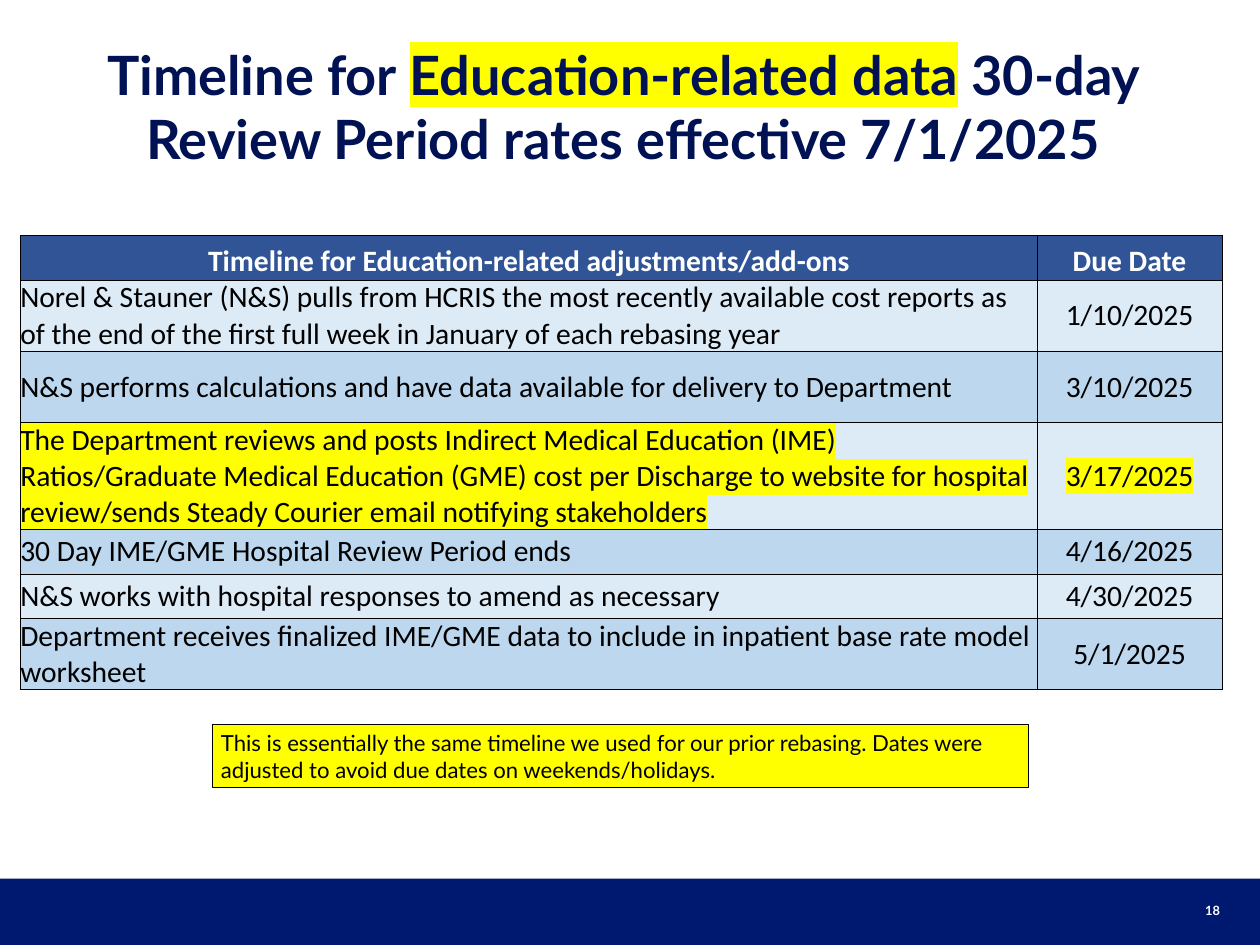
import pptx
import pptx.util
import pptx.dml.color
import pptx.enum.shapes
import pptx.enum.text
import pptx.oxml
import pptx.oxml.ns

Pt = pptx.util.Pt
RGBColor = pptx.dml.color.RGBColor
ALIGN = pptx.enum.text.PP_ALIGN
ANCHOR = pptx.enum.text.MSO_ANCHOR
RECTANGLE = pptx.enum.shapes.MSO_SHAPE.RECTANGLE

NAVY = RGBColor(0x00, 0x19, 0x70)
TITLE_NAVY = RGBColor(0x00, 0x12, 0x54)
HEADER_BLUE = RGBColor(0x30, 0x54, 0x96)
PALE_BLUE = RGBColor(0xDD, 0xEB, 0xF7)
LIGHT_BLUE = RGBColor(0xBD, 0xD7, 0xEE)
YELLOW = RGBColor(0xFF, 0xFF, 0x00)
WHITE = RGBColor(0xFF, 0xFF, 0xFF)
BLACK = RGBColor(0x00, 0x00, 0x00)
NAMESPACE = pptx.oxml.ns.nsdecls("a")


def write_text(paragraph, runs, font_name, size, color, bold, alignment):
    paragraph.alignment = alignment
    font = paragraph.font
    font.name, font.size, font.bold = font_name, Pt(size), bold
    font.color.rgb = color
    for text, highlighted in runs:
        run = paragraph.add_run()
        run.text = text
        if highlighted:
            run._r.get_or_add_rPr().append(pptx.oxml.parse_xml(
                f'<a:highlight {NAMESPACE}><a:srgbClr val="{YELLOW}"/></a:highlight>'))


def set_frame(frame, horizontal_inset, vertical_inset):
    frame.word_wrap = True
    frame.vertical_anchor = ANCHOR.MIDDLE
    frame.margin_left = frame.margin_right = Pt(horizontal_inset)
    frame.margin_top = frame.margin_bottom = Pt(vertical_inset)


presentation = pptx.Presentation()
presentation.slide_width, presentation.slide_height = Pt(1024), Pt(768)
slide = presentation.slides.add_slide(presentation.slide_layouts[6])

footer = slide.shapes.add_shape(RECTANGLE, Pt(0), Pt(714), Pt(1024), Pt(54))
footer.shadow.inherit = False
footer.fill.solid()
footer.fill.fore_color.rgb = NAVY
footer.line.fill.background()

page_number = slide.shapes.add_textbox(Pt(827), Pt(719), Pt(169.5), Pt(41))
set_frame(page_number.text_frame, 5, 3)
write_text(page_number.text_frame.paragraphs[0], [("18", False)],
           "Lato", 10.4, WHITE, True, ALIGN.RIGHT)

title = slide.shapes.add_textbox(Pt(19.5), Pt(31), Pt(974), Pt(110))
set_frame(title.text_frame, 0, 0)
title_runs = [("Timeline for ", False), ("Education-related data", True),
              (" 30-day Review Period rates effective 7/1/2025", False)]
write_text(title.text_frame.paragraphs[0], title_runs,
           "Lato", 44, TITLE_NAVY, True, ALIGN.CENTER)

timeline_rows = [
    (36, "Timeline for Education-related adjustments/add-ons", "Due Date"),
    (58, "Norel & Stauner (N&S) pulls from HCRIS the most recently available cost "
         "reports as of the end of the first full week in January of each rebasing year",
     "1/10/2025"),
    (58, "N&S performs calculations and have data available for delivery to Department",
     "3/10/2025"),
    (87, "The Department reviews and posts Indirect Medical Education (IME) "
         "Ratios/Graduate Medical Education (GME) cost per Discharge to website for "
         "hospital review/sends Steady Courier email notifying stakeholders",
     "3/17/2025"),
    (36, "30 Day IME/GME Hospital Review Period ends", "4/16/2025"),
    (36, "N&S works with hospital responses to amend as necessary", "4/30/2025"),
    (58, "Department receives finalized IME/GME data to include in inpatient base "
         "rate model worksheet", "5/1/2025"),
]
HIGHLIGHTED_ROW = 3
table_height = sum(height for height, step, due_date in timeline_rows)
table = slide.shapes.add_table(len(timeline_rows), 2, Pt(16.5), Pt(191.5),
                               Pt(976.5), Pt(table_height)).table
table.first_row = table.horz_banding = False
table.columns[0].width, table.columns[1].width = Pt(826.5), Pt(150)

for row_index, (height, *texts) in enumerate(timeline_rows):
    table.rows[row_index].height = Pt(height)
    is_header = row_index == 0
    for column_index, text in enumerate(texts):
        cell = table.cell(row_index, column_index)
        cell.margin_left = cell.margin_right = cell.margin_top = cell.margin_bottom = 0
        cell.vertical_anchor = ANCHOR.BOTTOM if is_header else ANCHOR.MIDDLE
        centered = is_header or column_index == 1
        write_text(cell.text_frame.paragraphs[0],
                   [(text, row_index == HIGHLIGHTED_ROW)], "Calibri", 24,
                   WHITE if is_header else BLACK, is_header,
                   ALIGN.CENTER if centered else ALIGN.LEFT)
        properties = cell._tc.get_or_add_tcPr()
        for side in ("lnL", "lnR", "lnT", "lnB"):
            properties.append(pptx.oxml.parse_xml(
                f'<a:{side} {NAMESPACE} w="{Pt(0.5)}"><a:solidFill>'
                f'<a:srgbClr val="{BLACK}"/></a:solidFill></a:{side}>'))
        cell.fill.solid()
        cell.fill.fore_color.rgb = (HEADER_BLUE if is_header
                                    else PALE_BLUE if row_index % 2 else LIGHT_BLUE)

note = slide.shapes.add_shape(RECTANGLE, Pt(172.5), Pt(589), Pt(663), Pt(51))
note.shadow.inherit = False
note.fill.solid()
note.fill.fore_color.rgb = YELLOW
note.line.color.rgb = BLACK
note.line.width = Pt(0.75)
set_frame(note.text_frame, 7.2, 3.6)
write_text(note.text_frame.paragraphs[0],
           [("This is essentially the same timeline we used for our prior rebasing. "
             "Dates were adjusted to avoid due dates on weekends/holidays.", False)],
           "Lato", 18, BLACK, False, ALIGN.LEFT)

presentation.save("out.pptx")
